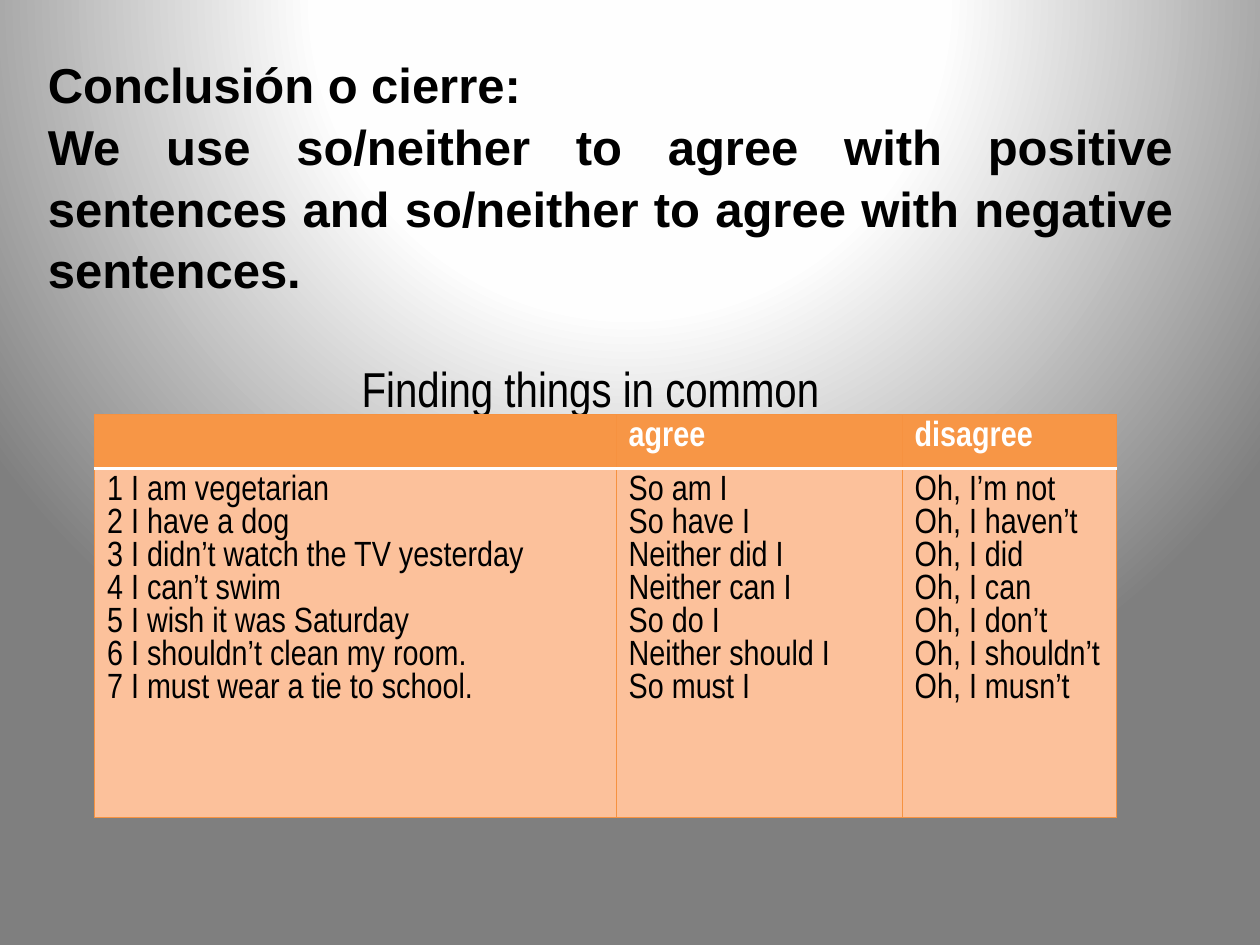
import dataclasses
import typing

import pptx
import pptx.dml.color
import pptx.enum.text
import pptx.oxml
import pptx.oxml.ns
import pptx.util

Inches = pptx.util.Inches
Align = pptx.enum.text.PP_ALIGN
BLACK, WHITE = "000000", "FFFFFF"
HEADER_FILL, BODY_FILL, BORDER = "F79646", "FCC19B", "F69240"


@dataclasses.dataclass(frozen=True)
class TextStyle:
    size: float
    font: str
    color: str = BLACK
    bold: bool = False
    alignment: typing.Any = Align.LEFT
    line_spacing: float = 1.0


@dataclasses.dataclass(frozen=True)
class Exchange:
    statement: str
    agree: str
    disagree: str


HEADING = TextStyle(28, "Arial", bold=True, alignment=Align.JUSTIFY, line_spacing=1.05)
CAPTION = TextStyle(28, "Arial Narrow", alignment=Align.CENTER)
TABLE_HEAD = TextStyle(20, "Arial Narrow", WHITE, bold=True)
TABLE_BODY = TextStyle(20, "Arial Narrow")

EXCHANGES = [
    Exchange("1 I am vegetarian", "So am I", "Oh, I’m not"),
    Exchange("2 I have a dog", "So have I", "Oh, I haven’t"),
    Exchange("3 I didn’t watch the TV yesterday", "Neither did I", "Oh, I did"),
    Exchange("4 I can’t swim", "Neither can I", "Oh, I can"),
    Exchange("5 I wish it was Saturday", "So do I", "Oh, I don’t"),
    Exchange("6 I shouldn’t clean my room.", "Neither should I", "Oh, I shouldn’t"),
    Exchange("7 I must wear a tie to school.", "So must I", "Oh, I musn’t"),
]


def rgb(color: str) -> pptx.dml.color.RGBColor:
    return pptx.dml.color.RGBColor.from_string(color)


def set_attributes(target: typing.Any, values: dict[str, typing.Any]) -> None:
    for name, value in values.items():
        setattr(target, name, value)


def write_text(frame: typing.Any, lines: list[str], style: TextStyle) -> None:
    for index, line in enumerate(lines):
        paragraph = frame.paragraphs[0] if index == 0 else frame.add_paragraph()
        set_attributes(
            paragraph,
            {"alignment": style.alignment, "line_spacing": style.line_spacing},
        )
        run = paragraph.add_run()
        run.text = line
        set_attributes(
            run.font,
            {"size": pptx.util.Pt(style.size), "name": style.font, "bold": style.bold},
        )
        run.font.color.rgb = rgb(style.color)


def paint_background(slide: typing.Any) -> None:
    stops = "".join(
        f'<a:gs pos="{position * 1000}"><a:srgbClr val="{color}"/></a:gs>'
        for position, color in [(0, WHITE), (40, "FEFEFE"), (100, "7F7F7F")]
    )
    background = pptx.oxml.parse_xml(
        f'<p:bg {pptx.oxml.ns.nsdecls("p", "a")}><p:bgPr><a:gradFill rotWithShape="1">'
        f'<a:gsLst>{stops}</a:gsLst><a:path path="circle">'
        '<a:fillToRect l="50000" t="-80000" r="50000" b="180000"/></a:path>'
        "</a:gradFill><a:effectLst/></p:bgPr></p:bg>"
    )
    slide.element.cSld.insert(0, background)


def style_cell(cell: typing.Any, fill: str, borders: dict[str, tuple[str, float]]) -> None:
    cell.fill.solid()
    cell.fill.fore_color.rgb = rgb(fill)
    properties = cell._tc.get_or_add_tcPr()
    for index, (side, (color, width)) in enumerate(borders.items()):
        line = pptx.oxml.parse_xml(
            f'<a:ln{side} {pptx.oxml.ns.nsdecls("a")} w="{int(pptx.util.Pt(width))}">'
            f'<a:solidFill><a:srgbClr val="{color}"/></a:solidFill></a:ln{side}>'
        )
        properties.insert(index, line)


def add_agreement_table(slide: typing.Any) -> None:
    table = slide.shapes.add_table(
        2, 3, Inches(0.75), Inches(3.29), Inches(8.11), Inches(3.2)
    ).table
    for column, width in zip(table.columns, [4.14, 2.27, 1.7]):
        column.width = Inches(width)
    for row, height in zip(table.rows, [0.43, 2.77]):
        row.height = Inches(height)

    thin, divider = (BORDER, 0.75), (WHITE, 2)
    outline = {side: thin for side in "LRTB"}
    fields = dataclasses.fields(Exchange)
    for index, field in enumerate(fields):
        header, body = table.cell(0, index), table.cell(1, index)
        if index:
            write_text(header.text_frame, [field.name], TABLE_HEAD)
        replies = [getattr(exchange, field.name) for exchange in EXCHANGES]
        write_text(body.text_frame, replies, TABLE_BODY)
        style_cell(header, HEADER_FILL, {**outline, "B": divider})
        style_cell(body, BODY_FILL, {**outline, "T": divider})


def place_text(shape: typing.Any, box: tuple[float, float, float, float]) -> typing.Any:
    sides = ("left", "top", "width", "height")
    set_attributes(shape, {side: Inches(value) for side, value in zip(sides, box)})
    set_attributes(
        shape.text_frame,
        {
            "word_wrap": True,
            "auto_size": pptx.enum.text.MSO_AUTO_SIZE.NONE,
            "vertical_anchor": pptx.enum.text.MSO_ANCHOR.TOP,
        },
    )
    return shape.text_frame


def main() -> None:
    presentation = pptx.Presentation()
    set_attributes(presentation, {"slide_width": Inches(10), "slide_height": Inches(7.5)})
    slide = presentation.slides.add_slide(presentation.slide_layouts[5])
    paint_background(slide)

    heading = place_text(slide.shapes.title, (0.28, 0.36, 9.13, 1.99))
    write_text(
        heading,
        [
            "Conclusión o cierre:",
            "We use so/neither to agree with positive sentences "
            "and so/neither to agree with negative sentences.",
        ],
        HEADING,
    )
    caption_box = slide.shapes.add_textbox(0, 0, 0, 0)
    caption = place_text(caption_box, (0.75, 2.8, 7.87, 0.47))
    write_text(caption, ["Finding things in common"], CAPTION)
    add_agreement_table(slide)
    presentation.save("out.pptx")


if __name__ == "__main__":
    main()
